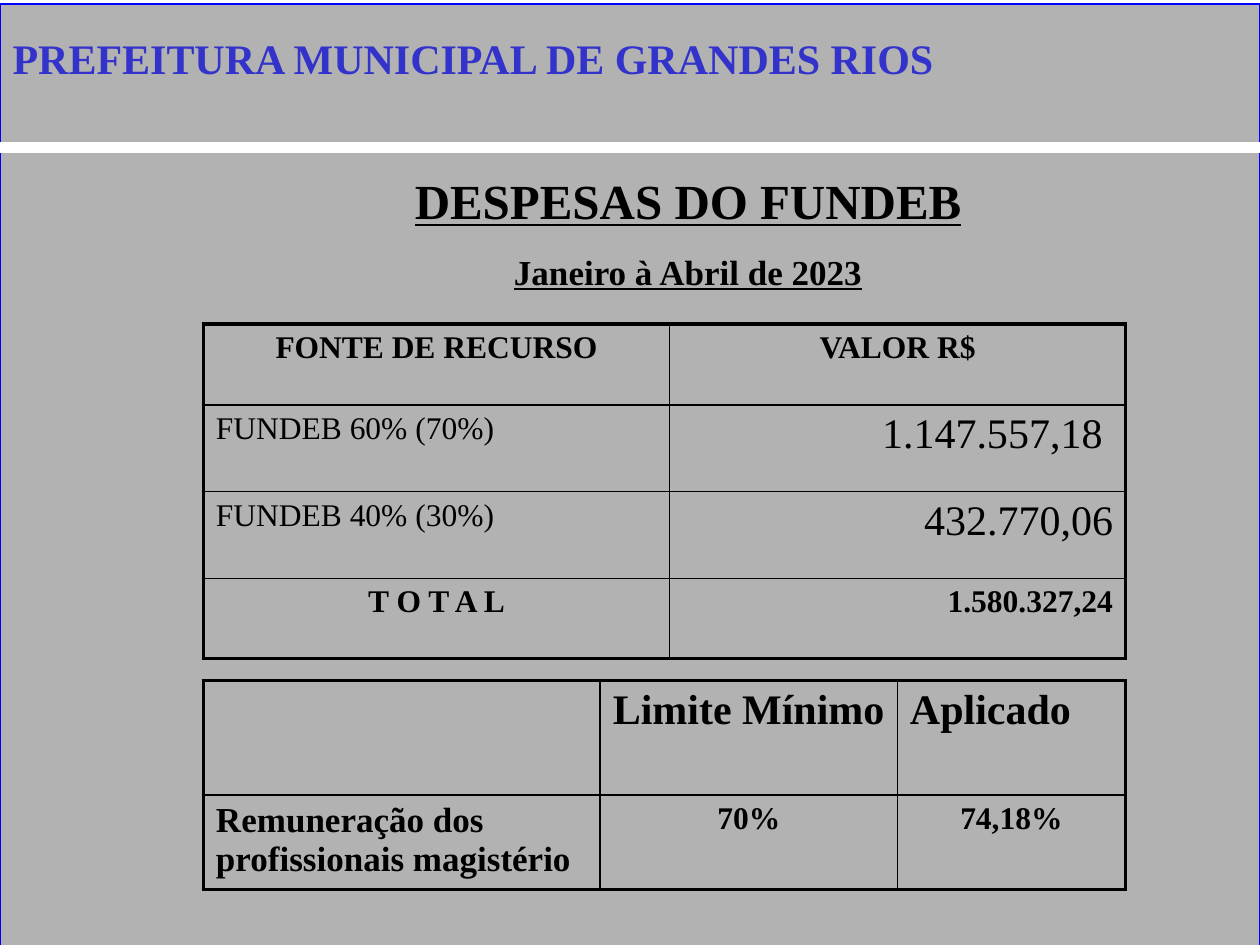
from dataclasses import dataclass

from lxml.etree import SubElement
from pptx import Presentation
from pptx.dml.color import RGBColor
from pptx.enum.shapes import MSO_CONNECTOR, MSO_SHAPE
from pptx.enum.text import MSO_ANCHOR, MSO_AUTO_SIZE, PP_ALIGN
from pptx.oxml.ns import qn
from pptx.util import Cm, Pt


@dataclass(frozen=True)
class Theme:
    font: str = "Times New Roman"
    ink: str = "000000"
    heading: str = "3333CC"
    shadow: str = "808080"
    panel: str = "B2B2B2"
    frame: str = "0000FF"
    rule: str = "FFFFFF"
    headline: int = 28
    large: int = 24
    medium: int = 20
    small: int = 18
    outer_border: float = 2.25
    inner_border: float = 1


THEME = Theme()


@dataclass(frozen=True)
class Entry:
    text: str
    size: int = THEME.small
    bold: bool = True
    align: PP_ALIGN = PP_ALIGN.LEFT


@dataclass(frozen=True)
class Grid:
    left: float
    top: float
    columns: tuple[float, ...]
    rows: tuple[float, ...]
    entries: tuple[tuple[Entry, ...], ...]


SPENDING = Grid(
    4.1, 6.53, (9.4, 9.19), (1.63, 1.75, 1.75, 1.61),
    (
        (Entry("FONTE DE RECURSO", align=PP_ALIGN.CENTER),
         Entry("VALOR R$", align=PP_ALIGN.CENTER)),
        (Entry("FUNDEB 60% (70%)", bold=False),
         Entry("1.147.557,18 ", THEME.large, False, PP_ALIGN.RIGHT)),
        (Entry("FUNDEB 40% (30%)", bold=False),
         Entry("432.770,06", THEME.large, False, PP_ALIGN.RIGHT)),
        (Entry("T O T A L", align=PP_ALIGN.CENTER),
         Entry("1.580.327,24", align=PP_ALIGN.RIGHT)),
    ),
)

LIMITS = Grid(
    4.1, 13.72, (8, 5.99, 4.6), (2.31, 1.9),
    (
        (Entry(""), Entry("Limite Mínimo", THEME.large), Entry("Aplicado", THEME.large)),
        (Entry("Remuneração dos profissionais magistério", THEME.medium),
         Entry("70%", align=PP_ALIGN.CENTER),
         Entry("74,18%", align=PP_ALIGN.CENTER)),
    ),
)

HEADLINES = (Entry("DESPESAS DO FUNDEB", THEME.headline, align=PP_ALIGN.CENTER),
             Entry("Janeiro à Abril de 2023", THEME.medium, align=PP_ALIGN.CENTER))


def color(value: str) -> RGBColor:
    return RGBColor.from_string(value)


def write(para, entry: Entry, ink: str = THEME.ink) -> None:
    if entry.text:
        para.add_run().text = entry.text
    para.alignment = entry.align
    para.space_before = Pt(0)
    para.font.name = THEME.font
    para.font.size = Pt(entry.size)
    para.font.bold = entry.bold
    para.font.color.rgb = color(ink)


def place(page, box, left: float, top: float, width: float, height: float):
    page.shapes.element.append(box.element)
    box.left, box.top, box.width, box.height = Cm(left), Cm(top), Cm(width), Cm(height)
    frame = box.text_frame
    frame.word_wrap = True
    frame.auto_size = MSO_AUTO_SIZE.NONE
    frame.vertical_anchor = MSO_ANCHOR.TOP
    return frame


def draw_backdrop(page) -> None:
    panel = page.shapes.add_shape(MSO_SHAPE.RECTANGLE, 0, Cm(0.08), Cm(25.4), Cm(19.05))
    panel.shadow.inherit = False
    panel.fill.solid()
    panel.fill.fore_color.rgb = color(THEME.panel)
    panel.line.color.rgb = color(THEME.frame)
    panel.line.width = Pt(0.75)
    rule = page.shapes.add_connector(MSO_CONNECTOR.STRAIGHT, 0, Cm(2.97), Cm(25.4), Cm(2.97))
    rule.line.color.rgb = color(THEME.rule)
    rule.line.width = Pt(6)
    SubElement(rule.element.spPr, qn("a:effectLst"))


def draw_title(page) -> None:
    frame = place(page, page.shapes.title, 0, 0.53, 24.1, 1.27)
    para = frame.paragraphs[0]
    write(para, Entry("PREFEITURA MUNICIPAL DE GRANDES RIOS", THEME.large), THEME.heading)
    effects = SubElement(para.runs[0]._r.get_or_add_rPr(), qn("a:effectLst"))
    shadow = SubElement(effects, qn("a:outerShdw"), dist=str(Pt(2.5)), dir="2700000")
    SubElement(shadow, qn("a:srgbClr"), val=THEME.shadow)


def draw_headlines(page) -> None:
    frame = place(page, page.placeholders[1], 3.61, 2.72, 20.52, 14)
    for index, entry in enumerate(HEADLINES):
        para = frame.add_paragraph() if index else frame.paragraphs[0]
        write(para, entry)
        para.line_spacing = 1.5
        para.font.underline = True
        properties = para._p.get_or_add_pPr()
        properties.set("marL", str(Cm(1.27)))
        properties.set("indent", str(Cm(-1.27)))
        properties.insert_element_before(
            properties.makeelement(qn("a:buNone")), "a:tabLst", "a:defRPr", "a:extLst")


def draw_borders(cell, outer_sides: dict[str, bool]) -> None:
    properties = cell._tc.get_or_add_tcPr()
    for side, is_outer in outer_sides.items():
        width = THEME.outer_border if is_outer else THEME.inner_border
        border = SubElement(properties, qn(f"a:ln{side}"), w=str(Pt(width)))
        fill = SubElement(border, qn("a:solidFill"))
        SubElement(fill, qn("a:srgbClr"), val=THEME.ink)


def draw_grid(page, grid: Grid) -> None:
    table = page.shapes.add_table(
        len(grid.rows), len(grid.columns), Cm(grid.left), Cm(grid.top),
        Cm(sum(grid.columns)), Cm(sum(grid.rows))).table
    table.first_row = table.horz_banding = False
    for column, width in zip(table.columns, grid.columns):
        column.width = Cm(width)
    for row, height in zip(table.rows, grid.rows):
        row.height = Cm(height)
    last_row, last_column = len(grid.rows) - 1, len(grid.columns) - 1
    for r, entries in enumerate(grid.entries):
        for c, entry in enumerate(entries):
            cell = table.cell(r, c)
            write(cell.text_frame.paragraphs[0], entry)
            draw_borders(cell, {"L": c == 0, "R": c == last_column,
                                "T": r == 0, "B": r == last_row})
            cell.fill.background()


def main() -> None:
    deck = Presentation()
    deck.slide_width, deck.slide_height = Cm(25.4), Cm(19.05)
    page = deck.slides.add_slide(deck.slide_layouts[1])
    draw_backdrop(page)
    draw_headlines(page)
    for grid in (SPENDING, LIMITS):
        draw_grid(page, grid)
    draw_title(page)
    deck.save("out.pptx")


if __name__ == "__main__":
    main()
